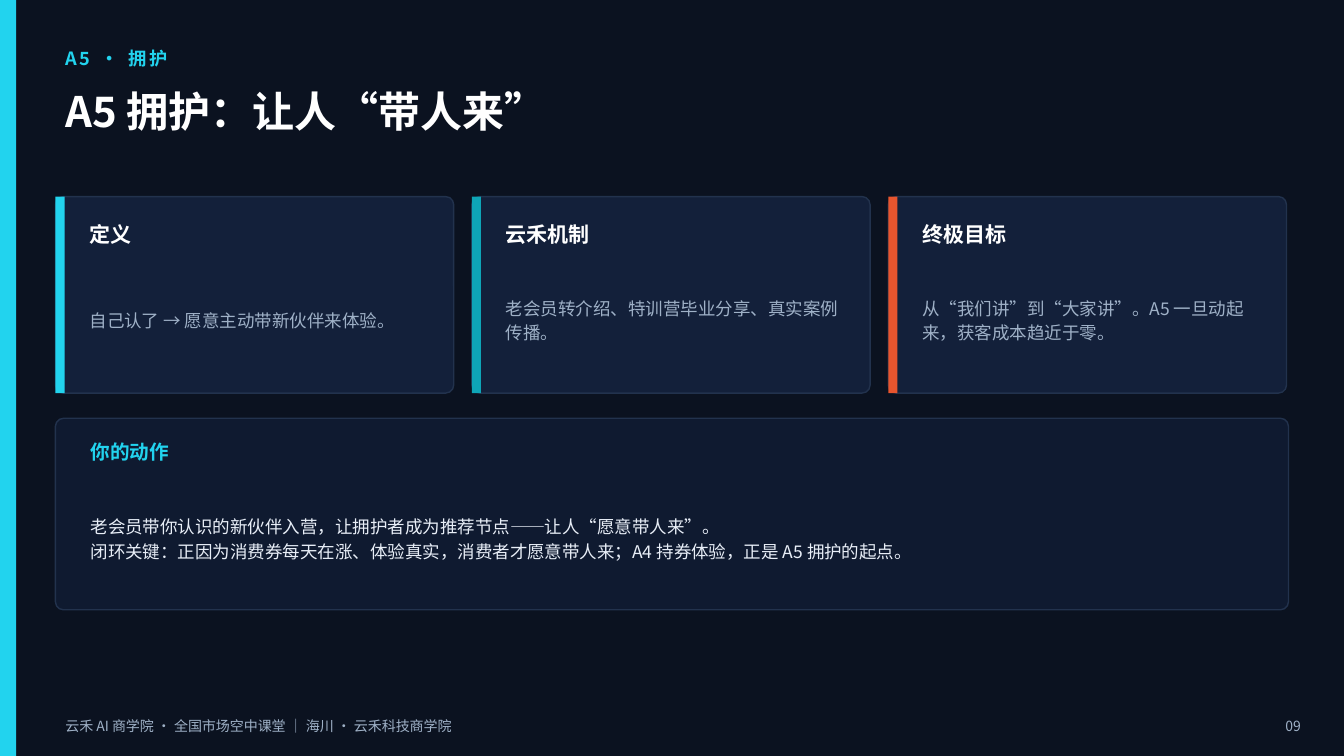
import pptx
import pptx.util
import pptx.dml.color
import pptx.enum.shapes
import pptx.enum.text
import pptx.oxml.ns
import lxml.etree

Inches = pptx.util.Inches
SHAPE = pptx.enum.shapes.MSO_SHAPE
ALIGN = pptx.enum.text.PP_ALIGN
CYAN, TEAL, ORANGE = "22D3EE", "0EA5B7", "E8552E"
WHITE, MUTED, PALE = "FFFFFF", "9FB1C7", "E8EEF7"
CARD, PANEL, BORDER = "13203A", "0F1A30", "22324D"


def rgb(value):
    return pptx.dml.color.RGBColor.from_string(value)


class Deck:
    font = "Noto Sans CJK SC"

    def __init__(self, width, height, background):
        self.prs = pptx.Presentation()
        self.prs.slide_width = Inches(width)
        self.prs.slide_height = Inches(height)
        self.s = self.prs.slides.add_slide(self.prs.slide_layouts[5])
        self.s.background.fill.solid()
        self.s.background.fill.fore_color.rgb = rgb(background)

    def fill_text(self, sp, lines, size, color, bold=False, align=ALIGN.LEFT, leading=None, tracking=0):
        tf = sp.text_frame
        frame_format = {
            "word_wrap": True,
            "auto_size": pptx.enum.text.MSO_AUTO_SIZE.NONE,
            "vertical_anchor": pptx.enum.text.MSO_ANCHOR.MIDDLE,
        }
        for name, value in frame_format.items():
            setattr(tf, name, value)
        tf.text = "\n".join(lines)
        for p in tf.paragraphs:
            for name, value in {"alignment": align, "line_spacing": leading}.items():
                setattr(p, name, value)
            for r in p.runs:
                font_format = {"name": self.font, "size": pptx.util.Pt(size), "bold": bold}
                for name, value in font_format.items():
                    setattr(r.font, name, value)
                r.font.color.rgb = rgb(color)
                props = r._r.get_or_add_rPr()
                lxml.etree.SubElement(props, pptx.oxml.ns.qn("a:ea"), typeface=self.font)
                if tracking:
                    props.set("spc", str(tracking * 100))

    def title(self, text, x, y, w, h, size, color):
        sp = self.s.shapes.title
        for name, value in {"left": x, "top": y, "width": w, "height": h}.items():
            setattr(sp, name, Inches(value))
        self.fill_text(sp, [text], size, color, bold=True)

    def text(self, lines, x, y, w, h, size, color, **style):
        sp = self.s.shapes.add_textbox(Inches(x), Inches(y), Inches(w), Inches(h))
        self.fill_text(sp, lines, size, color, **style)

    def block(self, kind, x, y, w, h, fill):
        sp = self.s.shapes.add_shape(kind, Inches(x), Inches(y), Inches(w), Inches(h))
        sp.shadow.inherit = False
        sp.fill.solid()
        sp.fill.fore_color.rgb = rgb(fill)
        return sp

    def bar(self, x, y, w, h, fill):
        self.block(SHAPE.RECTANGLE, x, y, w, h, fill).line.fill.background()

    def panel(self, x, y, w, h, fill):
        sp = self.block(SHAPE.ROUNDED_RECTANGLE, x, y, w, h, fill)
        sp.adjustments[0] = 0.08 / h
        sp.line.color.rgb = rgb(BORDER)
        sp.line.width = pptx.util.Pt(1)

    def card(self, x, y, w, h, accent, heading, body):
        self.panel(x, y, w, h, CARD)
        self.bar(x, y, 0.09, h, accent)
        self.text([heading], x + 0.24, y + 0.16, w - 0.4, 0.42, 15, WHITE, bold=True)
        self.text([body], x + 0.24, y + 0.6, w - 0.45, h - 0.72, 12.5, MUTED, leading=1.14)


def main():
    deck = Deck(13.33, 7.5, "0B1220")
    left = 0.55
    deck.bar(0, 0, 0.16, 7.5, CYAN)
    deck.text(["A5 · 拥护"], left, 0.42, 11, 0.32, 13, CYAN, bold=True, tracking=2)
    deck.title("A5 拥护：让人“带人来”", left, 0.74, 12.2, 0.72, 30, WHITE)

    cards = [
        (CYAN, "定义", "自己认了 → 愿意主动带新伙伴来体验。"),
        (TEAL, "云禾机制", "老会员转介绍、特训营毕业分享、真实案例传播。"),
        (ORANGE, "终极目标", "从“我们讲”到“大家讲”。A5 一旦动起来，获客成本趋近于零。"),
    ]
    for i, (accent, heading, body) in enumerate(cards):
        deck.card(left + i * 4.13, 1.95, 3.95, 1.95, accent, heading, body)

    deck.panel(left, 4.15, 12.23, 1.9, PANEL)
    deck.text(["你的动作"], 0.8, 4.28, 11.7, 0.4, 14, CYAN, bold=True)
    actions = [
        "老会员带你认识的新伙伴入营，让拥护者成为推荐节点——让人“愿意带人来”。",
        "闭环关键：正因为消费券每天在涨、体验真实，消费者才愿意带人来；A4 持券体验，正是 A5 拥护的起点。",
    ]
    deck.text(actions, 0.8, 4.7, 11.7, 1.25, 12.5, PALE, leading=1.18)

    footer = "云禾 AI 商学院 · 全国市场空中课堂 ｜ 海川 · 云禾科技商学院"
    deck.text([footer], left, 7.05, 9, 0.3, 10, MUTED)
    deck.text(["09"], 12.4, 7.05, 0.6, 0.3, 10, MUTED, align=ALIGN.RIGHT)
    deck.prs.save("out.pptx")


if __name__ == "__main__":
    main()
